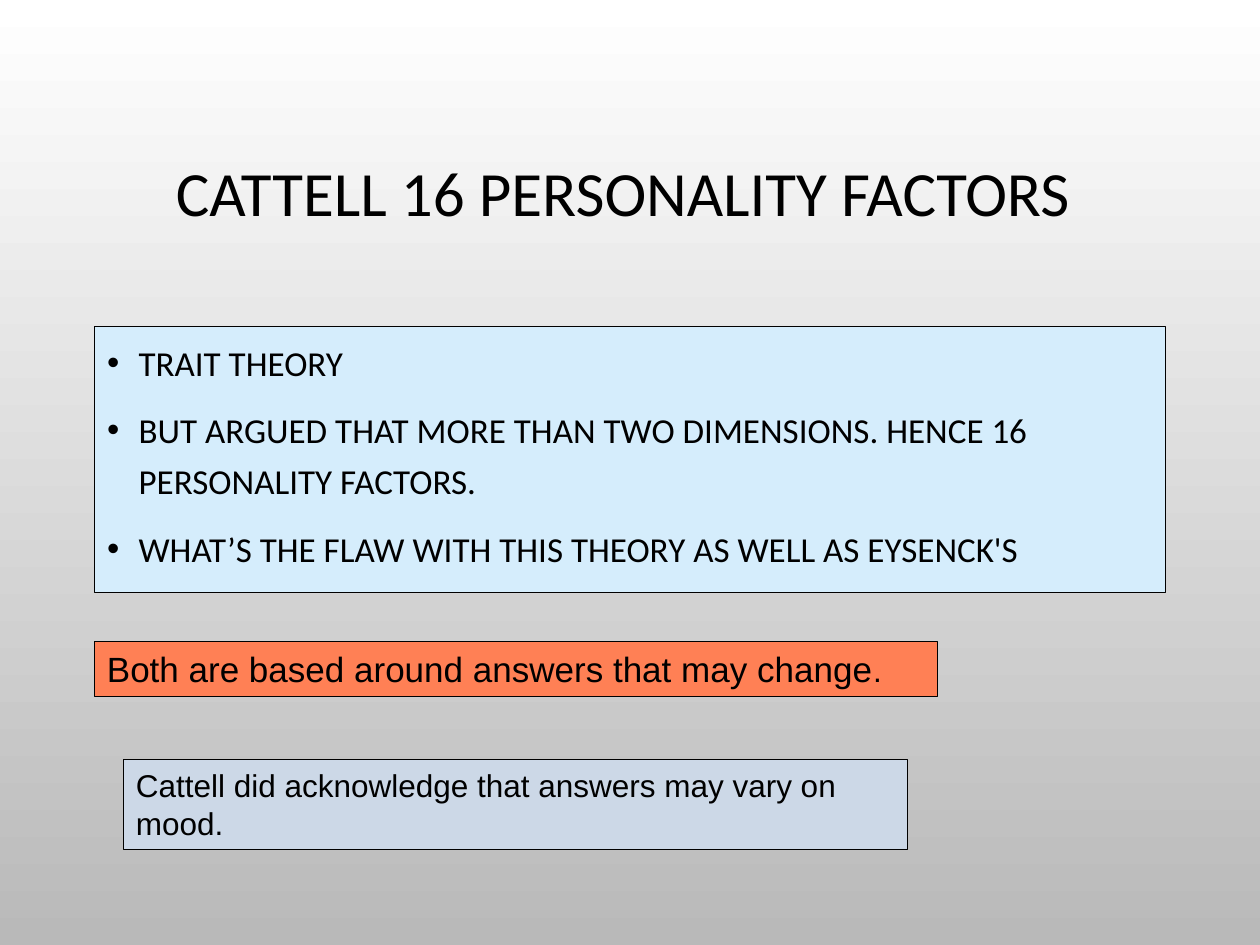
"""Build a slide on Cattell's 16 personality factors."""
from lxml.etree import SubElement
from pptx import Presentation
from pptx.dml.color import RGBColor
from pptx.enum.shapes import MSO_SHAPE
from pptx.enum.text import MSO_ANCHOR, MSO_AUTO_SIZE, PP_ALIGN
from pptx.oxml.ns import qn
from pptx.util import Inches, Pt

COLORS = {
    "text": "000000",
    "outline": "000000",
    "background_top": "FFFFFF",
    "background_bottom": "B9B9B9",
    "list": "D5EDFC",
    "answer": "FF8055",
    "note": "CCD8E7",
}
POINTS = [
    "TRAIT THEORY",
    "BUT ARGUED THAT MORE THAN TWO DIMENSIONS. HENCE 16 PERSONALITY FACTORS.",
    "WHAT’S THE FLAW WITH THIS THEORY AS WELL AS EYSENCK'S",
]


def color(name):
    return RGBColor.from_string(COLORS[name])


def set_background(slide):
    fill = slide.background.fill
    fill.gradient()
    fill.gradient_angle = 270
    for stop, name in zip(fill.gradient_stops, ("background_top", "background_bottom")):
        stop.color.rgb = color(name)


def place(shape, left, top, width, height):
    shape.left, shape.top = Inches(left), Inches(top)
    shape.width, shape.height = Inches(width), Inches(height)


def paint(shape, fill):
    shape.fill.solid()
    shape.fill.fore_color.rgb = color(fill)
    shape.line.color.rgb = color("outline")
    shape.line.width = Pt(0.75)


def write(paragraph, text, size, font="Arial", align=PP_ALIGN.LEFT, line_spacing=1.0, space_before=0):
    paragraph.alignment = align
    paragraph.line_spacing = line_spacing
    paragraph.space_before = Pt(space_before)
    run = paragraph.add_run()
    run.text = text
    run.font.size = Pt(size)
    run.font.name = font
    run.font.color.rgb = color("text")


def add_bullet(paragraph):
    properties = paragraph._p.get_or_add_pPr()
    properties.set("marL", str(Inches(0.25)))
    properties.set("indent", str(-Inches(0.25)))
    bullet_color = SubElement(properties, qn("a:buClr"))
    SubElement(bullet_color, qn("a:srgbClr"), val=COLORS["text"])
    SubElement(properties, qn("a:buFont"), typeface="Arial")
    SubElement(properties, qn("a:buChar"), char="•")


def fill_title(title, text):
    place(title, 0.75, 0.68, 8.5, 1.75)
    frame = title.text_frame
    frame.auto_size = MSO_AUTO_SIZE.NONE
    frame.vertical_anchor = MSO_ANCHOR.MIDDLE
    write(frame.paragraphs[0], text, 36, font="Calibri", align=PP_ALIGN.CENTER, line_spacing=0.9)


def fill_list(body, points):
    place(body, 0.75, 2.59, 8.5, 2.11)
    paint(body, "list")
    frame = body.text_frame
    frame.auto_size = MSO_AUTO_SIZE.NONE
    frame.vertical_anchor = MSO_ANCHOR.TOP
    for index, point in enumerate(points):
        paragraph = frame.add_paragraph() if index else frame.paragraphs[0]
        add_bullet(paragraph)
        write(paragraph, point, 20, font="Calibri", line_spacing=1.2, space_before=10 if index else 0)


def add_box(slide, left, top, width, height, fill, runs):
    shape = slide.shapes.add_shape(
        MSO_SHAPE.RECTANGLE, Inches(left), Inches(top), Inches(width), Inches(height))
    shape.shadow.inherit = False
    paint(shape, fill)
    frame = shape.text_frame
    frame.word_wrap = True
    frame.auto_size = MSO_AUTO_SIZE.SHAPE_TO_FIT_TEXT
    frame.vertical_anchor = MSO_ANCHOR.TOP
    for text, size in runs:
        write(frame.paragraphs[0], text, size)


def main():
    presentation = Presentation()
    presentation.slide_width, presentation.slide_height = Inches(10), Inches(7.5)
    slide = presentation.slides.add_slide(presentation.slide_layouts[1])
    set_background(slide)
    fill_title(slide.shapes.title, "CATTELL 16 PERSONALITY FACTORS ")
    fill_list(slide.placeholders[1], POINTS)
    add_box(slide, 0.75, 5.09, 6.69, 0.44, "answer",
            [("Both are based around answers that may change", 20), (".", 18)])
    add_box(slide, 0.98, 6.03, 6.22, 0.71, "note",
            [("Cattell did acknowledge that answers may vary on mood.", 18)])
    presentation.save("out.pptx")


if __name__ == "__main__":
    main()
